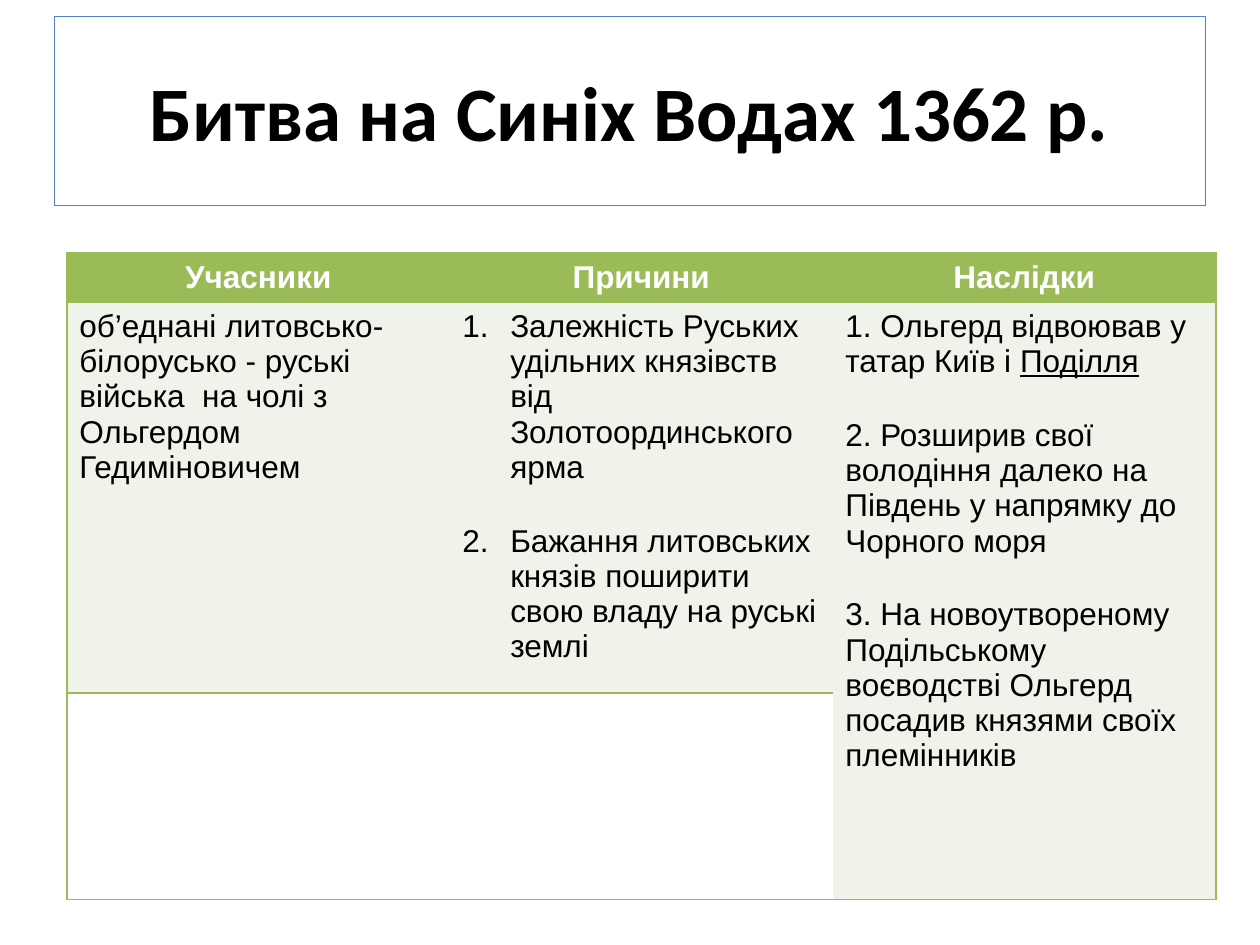
from dataclasses import dataclass

from lxml import etree
from pptx import Presentation
from pptx.dml.color import RGBColor
from pptx.enum.text import MSO_ANCHOR, PP_ALIGN
from pptx.oxml import ns
from pptx.util import Inches, Pt

GREEN, PALE, WHITE, BLACK, BLUE = "9BBB59", "EFF3EA", "FFFFFF", "000000", "4F81BD"
ROW_HEIGHTS = (0.39, 3.1, 1.64)
COLUMN_WIDTH = 3.04
ITEM_GAP = 22


@dataclass(frozen=True)
class Column:
    heading: str
    items: tuple[str, ...]
    underlined: str = ""
    numbered: bool = False


COLUMNS = (
    Column("Учасники", (
        "об’еднані литовсько- білорусько - руські війська  на чолі з Ольгердом Гедиміновичем",
    )),
    Column("Причини", (
        "Залежність Руських удільних князівств від Золотоординського ярма",
        "Бажання литовських князів поширити свою владу на руські землі",
    ), numbered=True),
    Column("Наслідки", (
        "1. Ольгерд відвоював у татар Київ i Поділля",
        "2. Розширив свої володіння далеко на Південь у напрямку до Чорного моря",
        "3. На новоутвореному Подільському воєводстві Ольгерд посадив князями своїх племінників",
    ), underlined="Поділля"),
)


def color(value: str) -> RGBColor:
    return RGBColor.from_string(value)


def add_text(paragraph, content: str, *, size=18, font="Arial", fill=BLACK,
             bold=False, underline=False, align=PP_ALIGN.LEFT) -> None:
    paragraph.alignment = align
    run = paragraph.add_run()
    run.text = content
    run.font.name = font
    run.font.size = Pt(size)
    run.font.bold = bold
    run.font.underline = underline
    run.font.color.rgb = color(fill)


def number_paragraph(paragraph) -> None:
    properties = paragraph._p.get_or_add_pPr()
    properties.set("marL", str(Inches(0.38)))
    properties.set("indent", str(-Inches(0.38)))
    bullet = etree.SubElement(properties, ns.qn("a:buAutoNum"))
    bullet.set("type", "arabicPeriod")


def style_cell(cell, fill: str, sides: str) -> None:
    cell.fill.solid()
    cell.fill.fore_color.rgb = color(fill)
    properties = cell._tc.get_or_add_tcPr()
    for index, side in enumerate("LRTB"):
        line = etree.Element(ns.qn(f"a:ln{side}"))
        if side in sides:
            line.set("w", str(Pt(1)))
            solid = etree.SubElement(line, ns.qn("a:solidFill"))
            etree.SubElement(solid, ns.qn("a:srgbClr")).set("val", GREEN)
        else:
            etree.SubElement(line, ns.qn("a:noFill"))
        properties.insert(index, line)


def fill_column(table, index: int, column: Column) -> None:
    heading = table.cell(0, index)
    heading.vertical_anchor = MSO_ANCHOR.MIDDLE
    add_text(heading.text_frame.paragraphs[0], column.heading,
             fill=WHITE, bold=True, align=PP_ALIGN.CENTER)
    frame = table.cell(1, index).text_frame
    for position, item in enumerate(column.items):
        paragraph = frame.add_paragraph() if position else frame.paragraphs[0]
        if position:
            paragraph.space_before = Pt(ITEM_GAP)
        if column.numbered:
            number_paragraph(paragraph)
        if column.underlined and item.endswith(column.underlined):
            add_text(paragraph, item.removesuffix(column.underlined))
            add_text(paragraph, column.underlined, underline=True)
        else:
            add_text(paragraph, item)


def add_title(slide) -> None:
    title = slide.shapes.title
    title.left, title.top = Inches(0.43), Inches(0.13)
    title.width, title.height = Inches(9.14), Inches(1.5)
    title.line.color.rgb = color(BLUE)
    title.line.width = Pt(0.75)
    title.text_frame.vertical_anchor = MSO_ANCHOR.MIDDLE
    add_text(title.text_frame.paragraphs[0], "Битва на Синіх Водах 1362 р.",
             size=44, font="Calibri", bold=True, align=PP_ALIGN.CENTER)


def add_battle_table(slide) -> None:
    last = len(COLUMNS) - 1
    table = slide.shapes.add_table(
        len(ROW_HEIGHTS), len(COLUMNS), Inches(0.53), Inches(2.01),
        Inches(COLUMN_WIDTH * len(COLUMNS)), Inches(sum(ROW_HEIGHTS))).table
    table.first_row = table.horz_banding = False
    for row, height in zip(table.rows, ROW_HEIGHTS):
        row.height = Inches(height)
    for index, column in enumerate(COLUMNS):
        table.columns[index].width = Inches(COLUMN_WIDTH)
        outer = {0: "L", last: "R"}.get(index, "")
        body_fill = PALE if index == last else WHITE
        for row_index, fill in enumerate((GREEN, PALE, body_fill)):
            style_cell(table.cell(row_index, index), fill, "TB" + outer)
        fill_column(table, index, column)
    table.cell(1, last).merge(table.cell(2, last))


def main() -> None:
    presentation = Presentation()
    presentation.slide_width, presentation.slide_height = Inches(10), Inches(7.5)
    slide = presentation.slides.add_slide(presentation.slide_layouts[5])
    add_title(slide)
    add_battle_table(slide)
    presentation.save("out.pptx")


if __name__ == "__main__":
    main()
